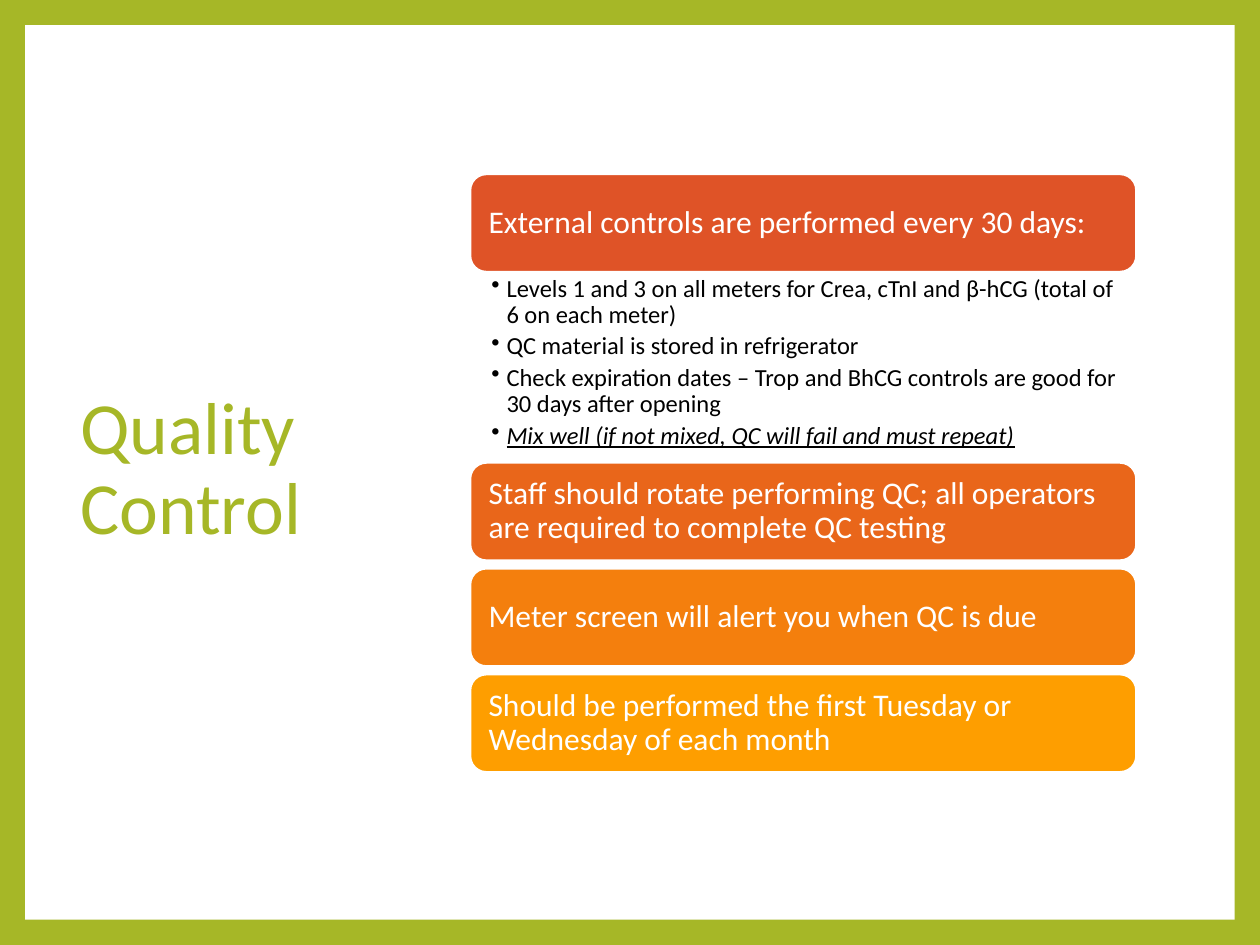
from pptx import Presentation
from pptx.dml.color import RGBColor
from pptx.enum.shapes import MSO_SHAPE
from pptx.enum.text import MSO_ANCHOR, PP_ALIGN
from pptx.oxml.ns import qn
from pptx.util import Inches, Pt
from lxml import etree

RECTANGLE, ROUNDED = MSO_SHAPE.RECTANGLE, MSO_SHAPE.ROUNDED_RECTANGLE
TOP, MIDDLE = MSO_ANCHOR.TOP, MSO_ANCHOR.MIDDLE
LEFT = PP_ALIGN.LEFT

GREEN = RGBColor(0xA6, 0xB7, 0x27)
WHITE = RGBColor(0xFF, 0xFF, 0xFF)
BLACK = RGBColor(0x00, 0x00, 0x00)
RED = RGBColor(0xDF, 0x53, 0x27)
DARK_ORANGE = RGBColor(0xE9, 0x66, 0x1A)
ORANGE = RGBColor(0xF4, 0x7F, 0x0D)
AMBER = RGBColor(0xFE, 0x9E, 0x00)

TITLE = "Quality Control"
MIX_WELL = "Mix well (if not mixed, QC will fail and must repeat)"
# Bar text, bar colour, bullets below the bar
SECTIONS = [
    ("External controls are performed every 30 days:", RED, [
        "Levels 1 and 3 on all meters for Crea, cTnI and β-hCG (total of 6 on each meter)",
        "QC material is stored in refrigerator",
        "Check expiration dates – Trop and BhCG controls are good for 30 days after opening",
        MIX_WELL,
    ]),
    ("Staff should rotate performing QC; all operators are required to complete QC testing",
     DARK_ORANGE, []),
    ("Meter screen will alert you when QC is due", ORANGE, []),
    ("Should be performed the first Tuesday or Wednesday of each month", AMBER, []),
]

BAR_LEFT, BAR_TOP, BAR_WIDTH, BAR_HEIGHT = 3.73, 1.38, 5.29, 0.78
BAR_GAP = 0.06
BULLETS_HEIGHT = 1.51
BULLET_INDENT = 0.12


def add_bullet(paragraph):
    properties = paragraph._p.get_or_add_pPr()
    properties.set("marL", str(Inches(BULLET_INDENT)))
    properties.set("indent", str(-Inches(BULLET_INDENT)))
    etree.SubElement(properties, qn("a:buChar")).set("char", "•")


def write_text(shape, lines, *, size, color, anchor=MIDDLE, insets=(0.1, 0.05, 0.1, 0.05),
               bullets=False, space_after=0, emphasized=None):
    """Fill a shape with paragraphs; insets are left, top, right, bottom in inches."""
    frame = shape.text_frame
    frame.word_wrap = True
    frame.vertical_anchor = anchor
    (frame.margin_left, frame.margin_top,
     frame.margin_right, frame.margin_bottom) = map(Inches, insets)
    for index, line in enumerate(lines):
        paragraph = frame.add_paragraph() if index else frame.paragraphs[0]
        if bullets:
            add_bullet(paragraph)
        paragraph.alignment = LEFT
        paragraph.line_spacing = 0.9
        paragraph.space_after = Pt(space_after)
        run = paragraph.add_run()
        run.text = line
        run.font.name = "Calibri"
        run.font.size = Pt(size)
        run.font.color.rgb = color
        if line == emphasized:
            run.font.italic = True
            run.font.underline = True


def add_box(slide, kind, left, top, width, height, fill):
    shape = slide.shapes.add_shape(kind, *map(Inches, (left, top, width, height)))
    shape.shadow.inherit = False
    shape.fill.solid()
    shape.fill.fore_color.rgb = fill
    shape.line.fill.background()
    return shape


def add_text(slide, left, top, width, height, lines, **text_format):
    box = slide.shapes.add_textbox(*map(Inches, (left, top, width, height)))
    write_text(box, lines, **text_format)


def main():
    presentation = Presentation()
    presentation.slide_width, presentation.slide_height = Inches(10), Inches(7.5)
    slide = presentation.slides.add_slide(presentation.slide_layouts[6])
    slide.background.fill.solid()
    slide.background.fill.fore_color.rgb = GREEN

    add_box(slide, RECTANGLE, 0.2, 0.2, 9.6, 7.1, WHITE)
    add_text(slide, 0.54, 0.67, 2.76, 6.13, [TITLE], size=42, color=GREEN)

    top = BAR_TOP
    for heading, color, bullets in SECTIONS:
        bar = add_box(slide, ROUNDED, BAR_LEFT, top, BAR_WIDTH, BAR_HEIGHT, color)
        bar.line.color.rgb = WHITE
        bar.line.width = Pt(1.5)
        write_text(bar, [heading], size=18, color=WHITE, insets=(0.11, 0.1, 0.11, 0.1))
        top += BAR_HEIGHT
        if bullets:
            add_text(slide, BAR_LEFT, top, BAR_WIDTH, BULLETS_HEIGHT, bullets,
                     size=14, color=BLACK, anchor=TOP, insets=(0.17, 0.03, 0.14, 0.03),
                     bullets=True, space_after=2.8, emphasized=MIX_WELL)
            top += BULLETS_HEIGHT
        else:
            top += BAR_GAP

    presentation.save("out.pptx")


if __name__ == "__main__":
    main()
